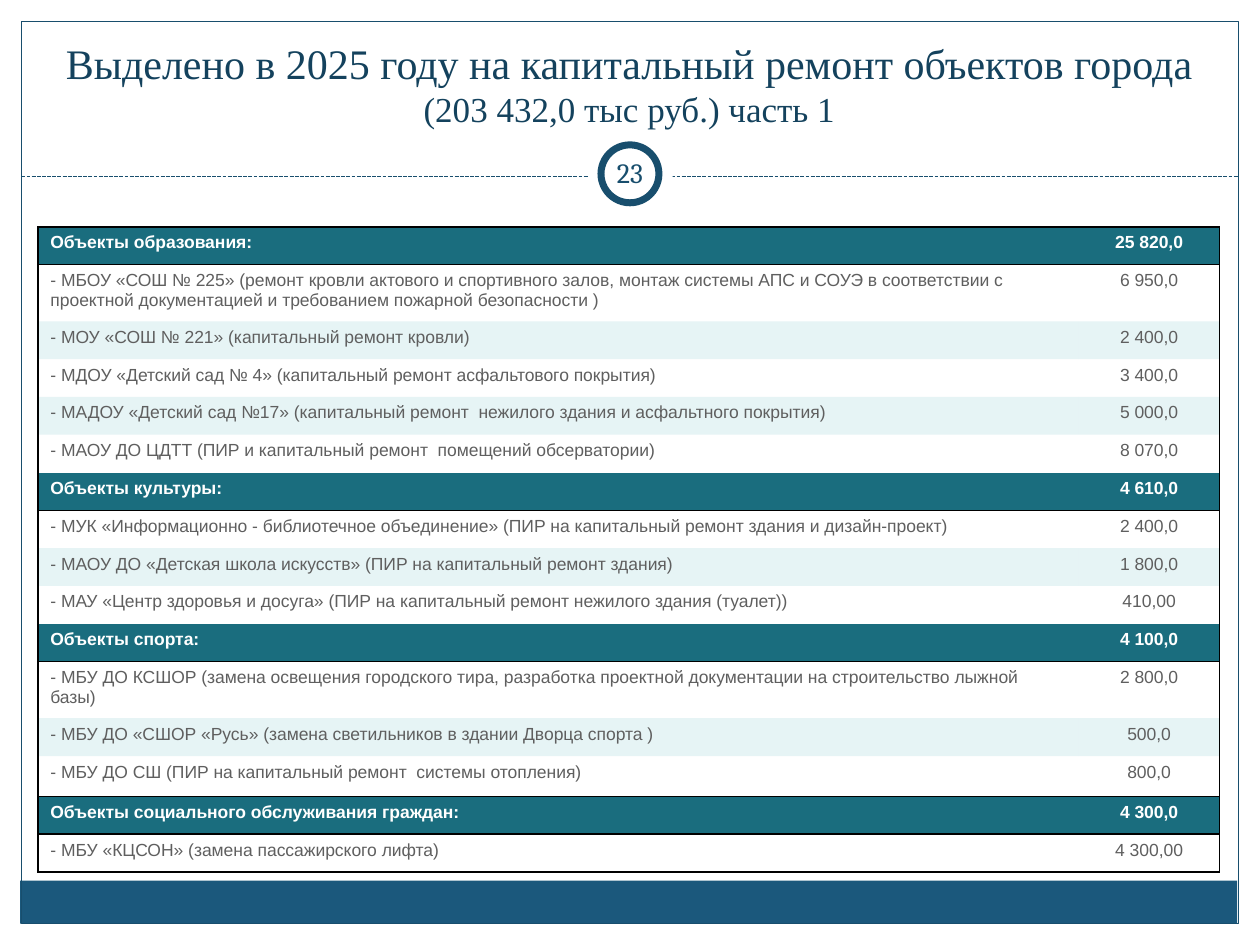
from dataclasses import dataclass

from lxml.etree import SubElement
from pptx import Presentation
from pptx.dml.color import RGBColor
from pptx.enum.dml import MSO_LINE
from pptx.enum.shapes import MSO_CONNECTOR, MSO_SHAPE
from pptx.enum.text import MSO_ANCHOR, PP_ALIGN
from pptx.oxml.ns import qn
from pptx.util import Inches, Pt

WHITE = RGBColor(0xFF, 0xFF, 0xFF)
BLACK = RGBColor(0x00, 0x00, 0x00)
NAVY = RGBColor(0x18, 0x4E, 0x6D)
FOOTER_BLUE = RGBColor(0x1B, 0x58, 0x7C)
TITLE_BLUE = RGBColor(0x14, 0x42, 0x5D)
TEAL = RGBColor(0x1A, 0x6D, 0x7E)
LIGHT_TEAL = RGBColor(0x84, 0xC9, 0xCE)
GRAY = RGBColor(0x5F, 0x5F, 0x5F)

COLUMN_WIDTHS = (8.26, 1.12)
ROW_HEIGHT = 0.3
TALL_ROW_HEIGHT = 0.45


@dataclass
class Item:
    name: str
    amount: str
    height: float = ROW_HEIGHT


@dataclass
class Section:
    heading: Item
    items: list[Item]
    ruled_above: bool = False


SECTIONS = [
    Section(Item("Объекты образования:", "25 820,0"), [
        Item("- МБОУ «СОШ № 225» (ремонт кровли актового и спортивного залов, монтаж системы АПС и СОУЭ "
             "в соответствии с проектной документацией и требованием пожарной безопасности )",
             "6 950,0", TALL_ROW_HEIGHT),
        Item("- МОУ «СОШ № 221» (капитальный ремонт кровли)", "2 400,0"),
        Item("- МДОУ «Детский сад № 4» (капитальный ремонт асфальтового покрытия)", "3 400,0"),
        Item("- МАДОУ «Детский сад №17» (капитальный ремонт  нежилого здания и асфальтного покрытия)", "5 000,0"),
        Item("- МАОУ ДО ЦДТТ (ПИР и капитальный ремонт  помещений обсерватории)", "8 070,0"),
    ], ruled_above=True),
    Section(Item("Объекты культуры:", "4 610,0"), [
        Item("- МУК «Информационно - библиотечное объединение» (ПИР на капитальный ремонт здания и дизайн-проект)",
             "2 400,0"),
        Item("- МАОУ ДО «Детская школа искусств» (ПИР на капитальный ремонт здания)", "1 800,0"),
        Item("- МАУ «Центр здоровья и досуга» (ПИР на капитальный ремонт нежилого здания (туалет))", "410,00"),
    ]),
    Section(Item("Объекты спорта:", "4 100,0"), [
        Item("- МБУ ДО КСШОР (замена освещения городского тира, разработка проектной документации "
             "на строительство лыжной базы)", "2 800,0", TALL_ROW_HEIGHT),
        Item("- МБУ ДО «СШОР «Русь» (замена светильников в здании Дворца спорта )", "500,0"),
        Item("- МБУ ДО СШ (ПИР на капитальный ремонт  системы отопления)", "800,0", 0.32),
    ]),
    Section(Item("Объекты социального обслуживания граждан:", "4 300,0"), [
        Item("- МБУ «КЦСОН» (замена пассажирского лифта)", "4 300,00"),
    ], ruled_above=True),
]


def add_shape(slide, kind: MSO_SHAPE, left: float, top: float, width: float, height: float,
              fill: RGBColor | None = None, line: RGBColor | None = None, line_width: float = 0.75):
    shape = slide.shapes.add_shape(kind, Inches(left), Inches(top), Inches(width), Inches(height))
    shape.shadow.inherit = False
    if fill is None:
        shape.fill.background()
    else:
        shape.fill.solid()
        shape.fill.fore_color.rgb = fill
    if line is None:
        shape.line.fill.background()
    else:
        shape.line.color.rgb = line
        shape.line.width = Pt(line_width)
    return shape


def add_text_frame(slide, left: float, top: float, width: float, height: float, anchor: MSO_ANCHOR):
    box = slide.shapes.add_textbox(Inches(left), Inches(top), Inches(width), Inches(height))
    frame = box.text_frame
    frame.word_wrap = True
    frame.vertical_anchor = anchor
    frame.paragraphs[0].alignment = PP_ALIGN.CENTER
    return frame


def add_frame(slide) -> None:
    """Draw the page border, footer band and dashed rule with its ring."""
    add_shape(slide, MSO_SHAPE.RECTANGLE, 0.16, 6.99, 9.66, 0.34, fill=FOOTER_BLUE)
    add_shape(slide, MSO_SHAPE.RECTANGLE, 0.17, 0.17, 9.66, 7.16, line=NAVY)
    rule = slide.shapes.add_connector(MSO_CONNECTOR.STRAIGHT, Inches(0.17), Inches(1.4), Inches(9.83), Inches(1.4))
    rule.line.color.rgb = NAVY
    rule.line.width = Pt(0.75)
    rule.line.dash_style = MSO_LINE.SQUARE_DOT
    SubElement(rule._element.spPr, qn("a:effectLst"))
    add_shape(slide, MSO_SHAPE.OVAL, 4.67, 1.05, 0.67, 0.67, fill=WHITE)
    add_shape(slide, MSO_SHAPE.OVAL, 4.77, 1.15, 0.46, 0.46, fill=WHITE, line=NAVY, line_width=4)


def add_title(slide) -> None:
    paragraph = add_text_frame(slide, 0.33, 0.25, 9.33, 0.83, MSO_ANCHOR.BOTTOM).paragraphs[0]
    paragraph.font.name = "Times New Roman"
    paragraph.font.color.rgb = TITLE_BLUE
    for text, size in (("Выделено в 2025 году на капитальный ремонт объектов города ", 24),
                       ("(203 432,0 тыс руб.) часть 1", 20)):
        run = paragraph.add_run()
        run.text = text
        run.font.size = Pt(size)


def add_page_number(slide) -> None:
    frame = add_text_frame(slide, 4.75, 1.13, 0.5, 0.48, MSO_ANCHOR.MIDDLE)
    frame.margin_left = frame.margin_right = frame.margin_top = frame.margin_bottom = Inches(0.05)
    paragraph = frame.paragraphs[0]
    paragraph.text = "23"
    paragraph.font.name = "Cambria"
    paragraph.font.size = Pt(16)
    paragraph.font.color.rgb = NAVY


def set_borders(cell, sides: str) -> None:
    """Rule the given sides (letters of LRTB) in black and clear the others."""
    properties = cell._tc.get_or_add_tcPr()
    for side in "LRTB":
        line = SubElement(properties, qn(f"a:ln{side}"), w=str(Pt(1)))
        if side in sides:
            fill = SubElement(line, qn("a:solidFill"))
            SubElement(fill, qn("a:srgbClr"), val=str(BLACK))
        else:
            SubElement(line, qn("a:noFill"))


def fill_row(row, item: Item, rules: str, color: RGBColor, fill: RGBColor | None,
             bold: bool = False, alpha: int = 100) -> None:
    row.height = Inches(item.height)
    columns = ((item.name, "L", PP_ALIGN.LEFT), (item.amount, "R", PP_ALIGN.CENTER))
    for cell, (text, outer_side, alignment) in zip(row.cells, columns):
        set_borders(cell, outer_side + rules)
        if fill is None:
            cell.fill.background()
        else:
            cell.fill.solid()
            cell.fill.fore_color.rgb = fill
            if alpha < 100:
                color_element = cell._tc.tcPr.find(qn("a:solidFill"))[0]
                SubElement(color_element, qn("a:alpha"), val=str(alpha * 1000))
        paragraph = cell.text_frame.paragraphs[0]
        paragraph.text = text
        paragraph.alignment = alignment
        paragraph.font.name = "Arial"
        paragraph.font.size = Pt(10)
        paragraph.font.bold = bold
        paragraph.font.color.rgb = color


def add_repairs_table(slide) -> None:
    row_count = sum(1 + len(section.items) for section in SECTIONS)
    table = slide.shapes.add_table(row_count, len(COLUMN_WIDTHS), Inches(0.3), Inches(1.8),
                                   Inches(sum(COLUMN_WIDTHS)), Inches(5.14)).table
    for column, width in zip(table.columns, COLUMN_WIDTHS):
        column.width = Inches(width)
    rows = iter(table.rows)
    for number, section in enumerate(SECTIONS):
        fill_row(next(rows), section.heading, "TB" if section.ruled_above else "B", WHITE, TEAL, bold=True)
        ruled_below = number + 1 == len(SECTIONS) or SECTIONS[number + 1].ruled_above
        for index, item in enumerate(section.items):
            rules = "T" if index == 0 else ""
            if ruled_below and index + 1 == len(section.items):
                rules += "B"
            fill_row(next(rows), item, rules, GRAY, LIGHT_TEAL if index % 2 else None, alpha=20)


def main() -> None:
    presentation = Presentation()
    presentation.slide_width, presentation.slide_height = Inches(10), Inches(7.5)
    slide = presentation.slides.add_slide(presentation.slide_layouts[6])
    add_frame(slide)
    add_title(slide)
    add_page_number(slide)
    add_repairs_table(slide)
    presentation.save("out.pptx")


if __name__ == "__main__":
    main()
